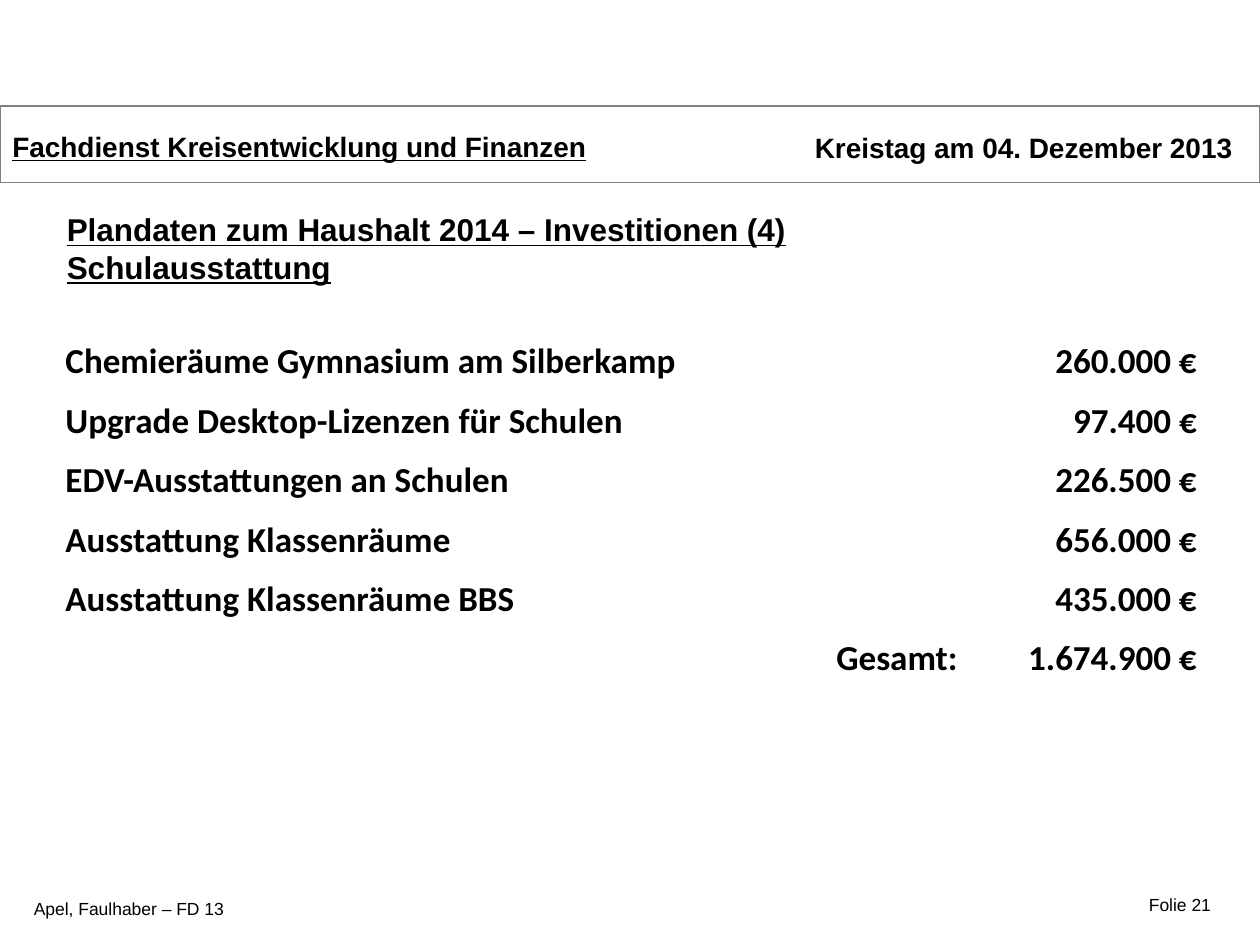
from pptx import Presentation
from pptx.dml.color import RGBColor
from pptx.enum.shapes import MSO_SHAPE
from pptx.enum.text import MSO_ANCHOR, MSO_AUTO_SIZE, PP_ALIGN
from pptx.util import Inches, Pt

BLACK = RGBColor(0x00, 0x00, 0x00)
GREY = RGBColor(0x80, 0x80, 0x80)
LEFT, RIGHT = PP_ALIGN.LEFT, PP_ALIGN.RIGHT
TOP, MIDDLE, BOTTOM = MSO_ANCHOR.TOP, MSO_ANCHOR.MIDDLE, MSO_ANCHOR.BOTTOM
RECTANGLE = MSO_SHAPE.RECTANGLE
NO_AUTOFIT = MSO_AUTO_SIZE.NONE
TITLE_ONLY = 5

INVESTMENTS = [
    ("Chemieräume Gymnasium am Silberkamp", "260.000 €"),
    ("Upgrade Desktop-Lizenzen für Schulen", "97.400 €"),
    ("EDV-Ausstattungen an Schulen", "226.500 €"),
    ("Ausstattung Klassenräume", "656.000 €"),
    ("Ausstattung Klassenräume BBS", "435.000 €"),
    ("Gesamt:", "1.674.900 €"),
]


def write_lines(frame, lines, size, font="Arial", bold=True, underline=False, align=LEFT):
    """Fill a text frame with one paragraph per line."""
    for index, line in enumerate(lines):
        para = frame.paragraphs[0] if index == 0 else frame.add_paragraph()
        para.alignment = align
        span = para.add_run()
        span.text = line
        span.font.name = font
        span.font.size = Pt(size)
        span.font.bold = bold
        span.font.underline = underline
        span.font.color.rgb = BLACK


def add_label(page, box, text, size, **style):
    label = page.shapes.add_textbox(*map(Inches, box))
    label.text_frame.word_wrap = True
    write_lines(label.text_frame, [text], size, **style)


def add_header(page, box):
    left, top, width, height = box
    # Framed band with the department name
    band = page.shapes.add_shape(RECTANGLE, *map(Inches, box))
    band.shadow.inherit = False
    band.fill.background()
    band.line.color.rgb = GREY
    band.line.width = Pt(0.75)
    frame = band.text_frame
    frame.vertical_anchor = MIDDLE
    frame.margin_top = Inches(0.08)
    write_lines(frame, ["Fachdienst Kreisentwicklung und Finanzen"], 16, underline=True)
    # Meeting date on the right
    add_label(page, (left + width - 3.82, top + 0.15, 3.7, 0.37),
              "Kreistag am 04. Dezember 2013", 16, align=RIGHT)


def add_title(page, box):
    title = page.shapes.title
    title.left, title.top, title.width, title.height = map(Inches, box)
    frame = title.text_frame
    frame.auto_size = NO_AUTOFIT
    frame.word_wrap = False
    frame.vertical_anchor = TOP
    write_lines(frame, ["Plandaten zum Haushalt 2014 – Investitionen (4)", "Schulausstattung"],
                18, underline=True)


def add_investments(page, box):
    left, top, width, height = map(Inches, box)
    amount_width = Inches(1.9)
    table = page.shapes.add_table(len(INVESTMENTS), 2, left, top, width, height).table
    table.first_row = False
    table.horz_banding = False
    table.columns[0].width = width - amount_width
    table.columns[1].width = amount_width
    for row, texts in enumerate(INVESTMENTS):
        is_total = row == len(INVESTMENTS) - 1
        for column, text in enumerate(texts):
            cell = table.cell(row, column)
            cell.fill.background()
            cell.vertical_anchor = BOTTOM
            cell.margin_left = cell.margin_right = cell.margin_top = Inches(0.01)
            cell.margin_bottom = 0
            align = RIGHT if column == 1 or is_total else LEFT
            write_lines(cell.text_frame, [text], 20, font="Calibri", align=align)


def add_footer(page, box):
    left, top, width, height = box
    add_label(page, (left, top + 0.03, 1.71, height), "Apel, Faulhaber – FD 13", 10, bold=False)
    add_label(page, (left + width - 0.87, top, 0.87, height), "Folie 21", 10, bold=False)


def main():
    deck = Presentation()
    deck.slide_width, deck.slide_height = Inches(10), Inches(7.5)
    page = deck.slides.add_slide(deck.slide_layouts[TITLE_ONLY])
    add_header(page, (0, 0.84, 10, 0.61))
    add_title(page, (0.43, 1.62, 5.97, 0.71))
    add_investments(page, (0.51, 2.57, 9, 2.83))
    add_footer(page, (0.17, 7.05, 9.72, 0.27))
    deck.save("out.pptx")


if __name__ == "__main__":
    main()
